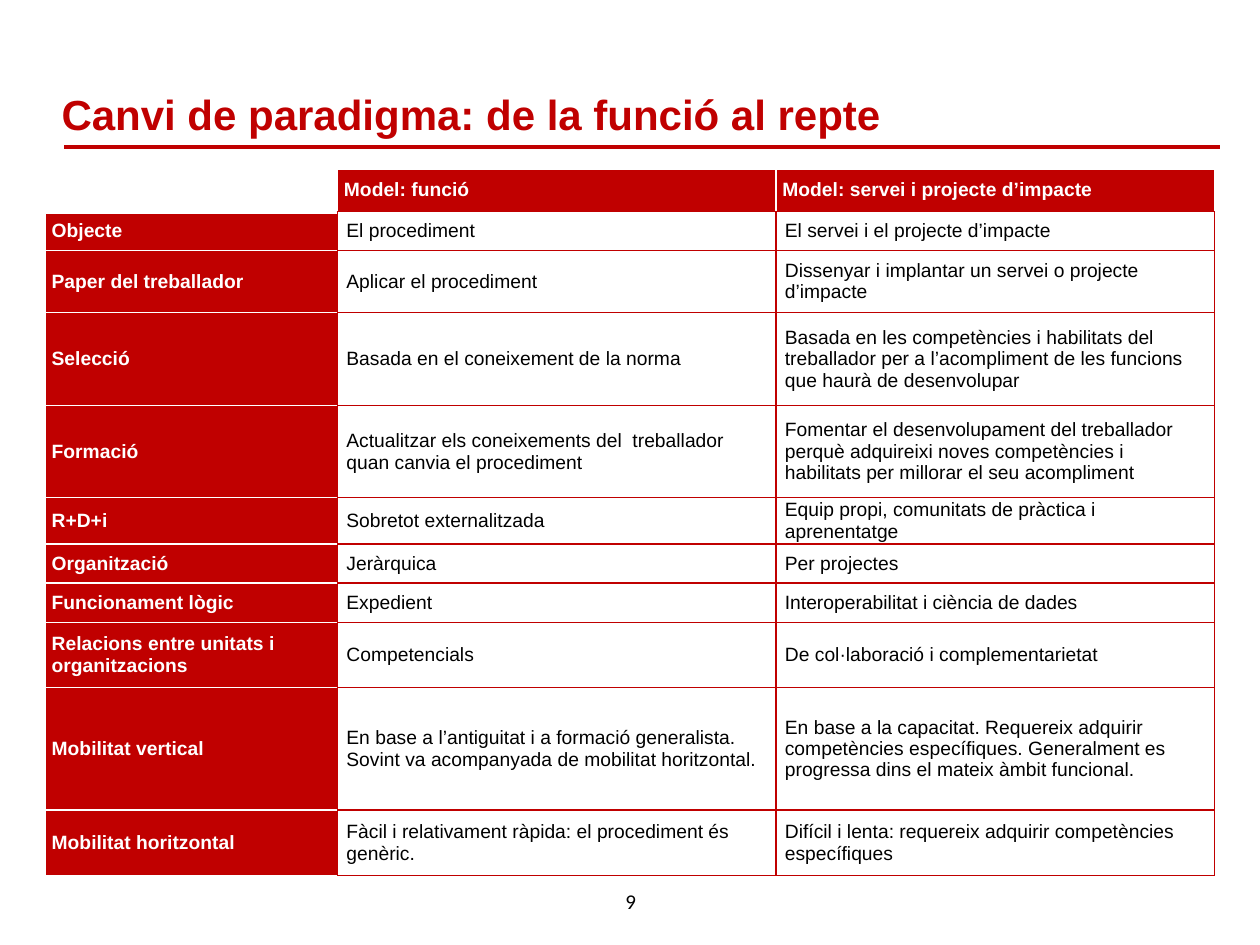
import pptx
import pptx.util
import pptx.dml.color
import pptx.enum.shapes
import pptx.enum.text
import pptx.oxml
import pptx.oxml.ns
from pptx.util import Inches, Pt

RED = pptx.dml.color.RGBColor(0xC0, 0x00, 0x00)
WHITE = pptx.dml.color.RGBColor(0xFF, 0xFF, 0xFF)
BLACK = pptx.dml.color.RGBColor(0x00, 0x00, 0x00)

COL_WIDTHS = [2.32, 3.48, 3.48]
ROW_HEIGHTS = [0.34, 0.31, 0.49, 0.74, 0.73, 0.37, 0.31, 0.31, 0.52, 0.97, 0.52]
ROWS = [
    ("", "Model: funció", "Model: servei i projecte d’impacte"),
    ("Objecte", "El procediment", "El servei i el projecte d’impacte"),
    ("Paper del treballador", "Aplicar el procediment",
     "Dissenyar i implantar un servei o projecte d’impacte"),
    ("Selecció", "Basada en el coneixement de la norma",
     "Basada en les competències i habilitats del treballador per a "
     "l’acompliment de les funcions que haurà de desenvolupar"),
    ("Formació",
     "Actualitzar els coneixements del  treballador quan canvia el procediment",
     "Fomentar el desenvolupament del treballador perquè adquireixi noves "
     "competències i habilitats per millorar el seu acompliment"),
    ("R+D+i", "Sobretot externalitzada",
     "Equip propi, comunitats de pràctica i aprenentatge"),
    ("Organització", "Jeràrquica", "Per projectes"),
    ("Funcionament lògic", "Expedient", "Interoperabilitat i ciència de dades"),
    ("Relacions entre unitats i organitzacions", "Competencials",
     "De col·laboració i complementarietat"),
    ("Mobilitat vertical",
     "En base a l’antiguitat i a formació generalista. Sovint va acompanyada "
     "de mobilitat horitzontal.",
     "En base a la capacitat. Requereix adquirir competències específiques. "
     "Generalment es progressa dins el mateix àmbit funcional."),
    ("Mobilitat horitzontal",
     "Fàcil i relativament ràpida: el procediment és genèric.",
     "Difícil i lenta: requereix adquirir competències específiques"),
]


def set_font(p, name, size, color, bold=False):
    """Set the font of a whole paragraph."""
    p.font.name = name
    p.font.size = Pt(size)
    p.font.bold = bold
    p.font.color.rgb = color


def add_text(s, text, left, top, width, height):
    """Add a wrapped, vertically centred text box and return its paragraph."""
    tf = s.shapes.add_textbox(Inches(left), Inches(top), Inches(width), Inches(height)).text_frame
    tf.word_wrap = True
    tf.vertical_anchor = pptx.enum.text.MSO_ANCHOR.MIDDLE
    p = tf.paragraphs[0]
    p.text = text
    return p


def add_title(s, left, top, width, height):
    """Add the title and the rule below it."""
    p = add_text(s, "Canvi de paradigma: de la funció al repte", left, top, width, height)
    set_font(p, "Arial", 24, RED, True)
    y = Inches(top + 0.54)
    rule = s.shapes.add_connector(pptx.enum.shapes.MSO_CONNECTOR.STRAIGHT,
                                  Inches(left + 0.12), y, Inches(left + width - 0.08), y)
    rule.line.color.rgb = RED
    rule.line.width = Pt(2.25)
    rule._element.spPr.append(pptx.oxml.parse_xml(
        f"<a:effectLst {pptx.oxml.ns.nsdecls('a')}/>"))


def set_borders(cell, **sides):
    """Draw cell borders given as side=(colour, points), in the order L, R, T, B."""
    for side, (color, points) in sides.items():
        cell._tc.get_or_add_tcPr().append(pptx.oxml.parse_xml(
            f'<a:ln{side} {pptx.oxml.ns.nsdecls("a")} w="{Pt(points)}"><a:solidFill>'
            f'<a:srgbClr val="{color}"/></a:solidFill></a:ln{side}>'))


def style_cell(cell, row, col):
    """Style a cell as corner, header or body according to its place."""
    corner, header = row == col == 0, row == 0 or col == 0
    edge = (WHITE if header else RED, 1)
    right = (RED, 1) if col == 0 and row else edge
    bottom = (WHITE, 3) if corner else (RED, 1) if row == 0 else edge
    set_borders(cell, L=edge, R=right, T=edge, B=bottom)
    cell.fill.solid()
    cell.fill.fore_color.rgb = RED if header and not corner else WHITE
    cell.vertical_anchor = pptx.enum.text.MSO_ANCHOR.MIDDLE
    cell.margin_left = cell.margin_right = Inches(0.05 if header else 0.07)
    cell.margin_top = cell.margin_bottom = 0
    p = cell.text_frame.paragraphs[0]
    set_font(p, "Arial", 11, WHITE if header else BLACK, header)
    if not corner:
        p.space_before, p.space_after = Pt(6), Pt(12)


def add_comparison(s, left, top, width, height):
    """Add the table that compares the two models."""
    table = s.shapes.add_table(len(ROWS), len(COL_WIDTHS), Inches(left), Inches(top),
                               Inches(width), Inches(height)).table
    table.first_row = table.horz_banding = False
    for column, size in zip(table.columns, COL_WIDTHS):
        column.width = Inches(size)
    for i, (texts, size) in enumerate(zip(ROWS, ROW_HEIGHTS)):
        table.rows[i].height = Inches(size)
        for j, text in enumerate(texts):
            cell = table.cell(i, j)
            if text:
                cell.text = text
            style_cell(cell, i, j)


def add_page_number(s, left, top, width, height):
    """Add the centred page number."""
    p = add_text(s, "9", left, top, width, height)
    p.alignment = pptx.enum.text.PP_ALIGN.CENTER
    set_font(p, "Calibri", 12, BLACK)


def main():
    """Build and save the slide."""
    prs = pptx.Presentation()
    prs.slide_width, prs.slide_height = Inches(10), Inches(7.5)
    s = prs.slides.add_slide(prs.slide_layouts[6])
    add_page_number(s, 4.73, 6.95, 0.55, 0.4)
    add_comparison(s, 0.36, 1.34, sum(COL_WIDTHS), sum(ROW_HEIGHTS))
    add_title(s, 0.39, 0.63, 9.37, 0.55)
    prs.save("out.pptx")


if __name__ == "__main__":
    main()
